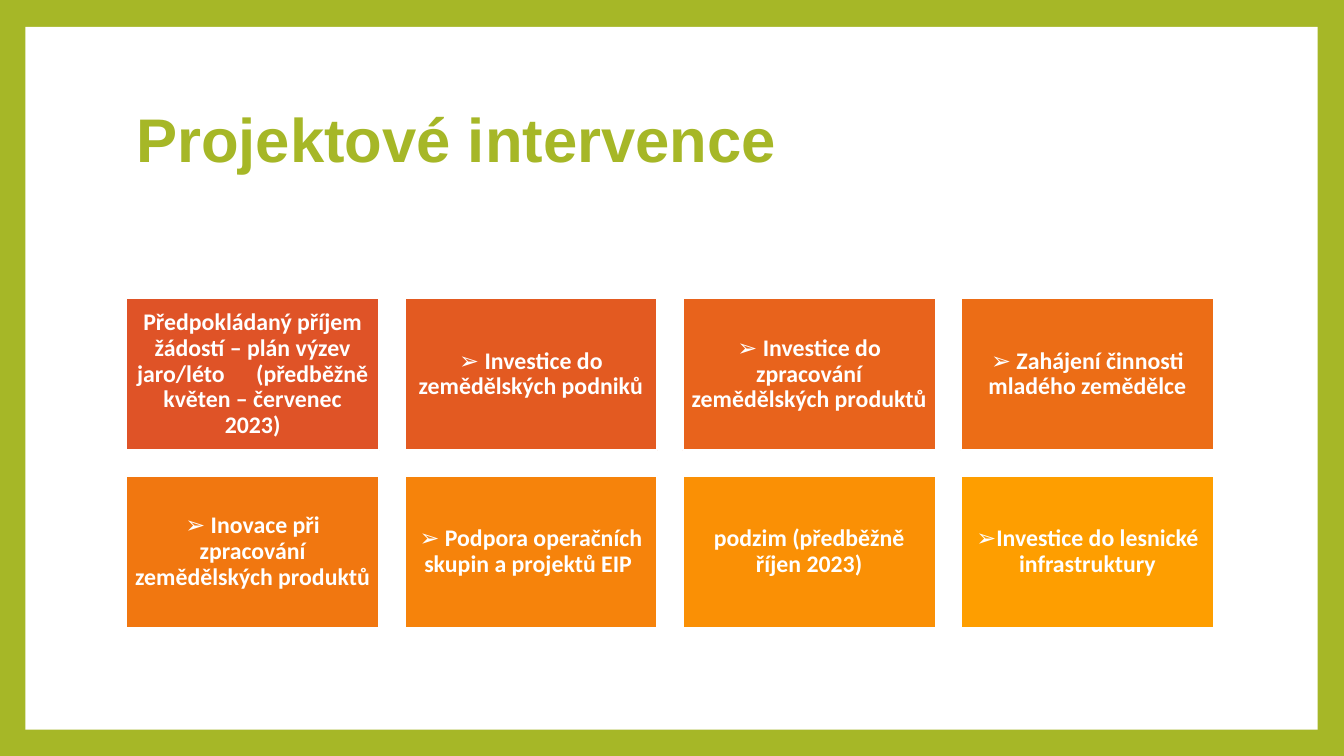
from pptx import Presentation
from pptx import util as u
from pptx.dml.color import RGBColor
from pptx.enum import shapes, text

GREEN = RGBColor(0xA6, 0xB7, 0x27)
WHITE = RGBColor(0xFF, 0xFF, 0xFF)

COLUMNS = 4
GAP = u.Cm(0.64)
WIDE_SPACE = 1850  # extra width after a space, in hundredths of a point

INTERVENTIONS = [
    (RGBColor(0xDF, 0x53, 0x27),
     ["Předpokládaný příjem žádostí – plán výzev jaro/léto", " ",
      "(předběžně květen – červenec 2023)"]),
    (RGBColor(0xE3, 0x5A, 0x21), ["➢ Investice do zemědělských podniků"]),
    (RGBColor(0xE8, 0x63, 0x1C), ["➢ Investice do zpracování zemědělských produktů"]),
    (RGBColor(0xEC, 0x6D, 0x16), ["➢ Zahájení činnosti mladého zemědělce"]),
    (RGBColor(0xF1, 0x77, 0x10), ["➢ Inovace při zpracování zemědělských produktů"]),
    (RGBColor(0xF6, 0x83, 0x0B), ["➢ Podpora operačních skupin a projektů EIP "]),
    (RGBColor(0xFA, 0x90, 0x05), ["podzim (předběžně říjen 2023)"]),
    (RGBColor(0xFE, 0x9E, 0x00), ["➢Investice do lesnické infrastruktury"]),
]


def add_run(paragraph, words, font_name, size, color):
    run = paragraph.add_run()
    run.text = words
    run.font.name = font_name
    run.font.size = u.Pt(size)
    run.font.bold = True
    run.font.color.rgb = color
    return run


def add_rectangle(slide, box, fill):
    rectangle = slide.shapes.add_shape(shapes.MSO_SHAPE.RECTANGLE, *box)
    rectangle.shadow.inherit = False
    rectangle.fill.solid()
    rectangle.fill.fore_color.rgb = fill
    rectangle.line.fill.background()
    return rectangle


def add_frame(slide, box):
    """Green background with a white panel behind everything else."""
    slide.background.fill.solid()
    slide.background.fill.fore_color.rgb = GREEN
    panel = add_rectangle(slide, box, WHITE)
    slide.shapes.title.element.addprevious(panel.element)


def add_title(slide, box, words):
    title = slide.shapes.title
    title.left, title.top, title.width, title.height = box
    frame = title.text_frame
    frame.word_wrap = True
    frame.vertical_anchor = text.MSO_ANCHOR.MIDDLE
    paragraph = frame.paragraphs[0]
    paragraph.alignment = text.PP_ALIGN.LEFT
    paragraph.line_spacing = 0.9
    add_run(paragraph, words, "Arial", 44, GREEN)


def add_tile(slide, box, fill, parts):
    tile = add_rectangle(slide, box, fill)
    tile.line.color.rgb = WHITE
    tile.line.width = u.Pt(1.5)
    frame = tile.text_frame
    frame.word_wrap = True
    frame.vertical_anchor = text.MSO_ANCHOR.MIDDLE
    frame.margin_left = frame.margin_right = u.Cm(0.18)
    frame.margin_top = frame.margin_bottom = u.Cm(0.18)
    paragraph = frame.paragraphs[0]
    paragraph.alignment = text.PP_ALIGN.CENTER
    paragraph.line_spacing = 0.9
    for part in parts:
        run = add_run(paragraph, part, "Calibri", 17, WHITE)
        if part == " ":
            run.font._element.set("spc", str(WIDE_SPACE))


def add_tile_grid(slide, box, tiles):
    left, top, width, height = box
    rows = -(-len(tiles) // COLUMNS)
    tile_width = (width - GAP * (COLUMNS - 1)) // COLUMNS
    tile_height = (height - GAP * (rows - 1)) // rows
    for index, (fill, parts) in enumerate(tiles):
        row, column = divmod(index, COLUMNS)
        tile_box = (left + column * (tile_width + GAP),
                    top + row * (tile_height + GAP),
                    tile_width, tile_height)
        add_tile(slide, tile_box, fill, parts)


def main():
    presentation = Presentation()
    presentation.slide_width = u.Cm(33.87)
    presentation.slide_height = u.Cm(19.05)
    slide = presentation.slides.add_slide(presentation.slide_layouts.get_by_name("Title Only"))
    add_frame(slide, (u.Cm(0.64), u.Cm(0.68), u.Cm(32.57), u.Cm(17.71)))
    add_title(slide, (u.Cm(3.18), u.Cm(1.7), u.Cm(27.43), u.Cm(3.76)),
              "Projektové intervence")
    add_tile_grid(slide, (u.Cm(3.18), u.Cm(7.52), u.Cm(27.41), u.Cm(8.3)),
                  INTERVENTIONS)
    presentation.save("out.pptx")


if __name__ == "__main__":
    main()
